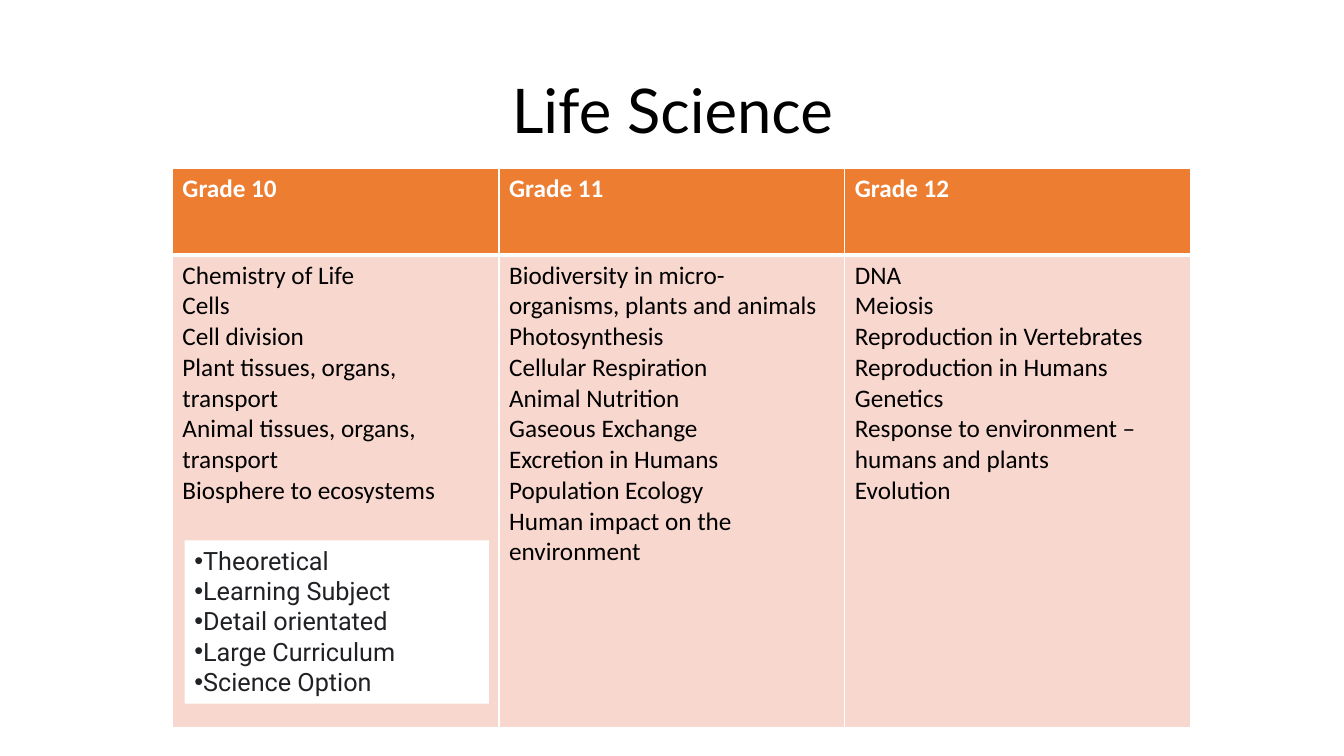
"""Builds the Life Science curriculum slide."""
import dataclasses

import lxml.etree
import pptx
import pptx.dml.color
import pptx.enum.shapes
import pptx.enum.text
import pptx.oxml.ns
import pptx.util

Inches = pptx.util.Inches


@dataclasses.dataclass(frozen=True)
class Theme:
    """Colours, fonts and type sizes of the slide."""
    black: str = "000000"
    white: str = "FFFFFF"
    header: str = "ED7D31"
    body: str = "F8D7CE"
    note: str = "202124"
    title_font: str = "Lato"
    table_font: str = "Calibri"
    note_font: str = "Roboto"
    title_size: int = 44
    text_size: int = 18
    rule: int = 1
    header_rule: int = 3


def add_child(parent, tag, **attributes):
    """Append a DrawingML element and return it."""
    return lxml.etree.SubElement(parent, pptx.oxml.ns.qn(tag), **attributes)


class SlideBuilder:
    """Holds the theme and the current slide."""

    def __init__(self, slide, theme):
        """Keep the slide and theme for the element methods."""
        self.slide = slide
        self.theme = theme

    def fill(self, target, colour):
        """Give a shape or cell a solid fill."""
        target.fill.solid()
        target.fill.fore_color.rgb = pptx.dml.color.RGBColor.from_string(colour)

    def add_lines(self, frame, lines, font, size, colour, bold=False,
                  align=pptx.enum.text.PP_ALIGN.LEFT):
        """Add each line as a paragraph with one run."""
        for index, line in enumerate(lines):
            paragraph = frame.add_paragraph() if index else frame.paragraphs[0]
            paragraph.alignment = align
            run = paragraph.add_run()
            run.text = line
            run.font.name = font
            run.font.size = pptx.util.Pt(size)
            run.font.bold = bold
            run.font.color.rgb = pptx.dml.color.RGBColor.from_string(colour)

    def title(self, text, left, top, width, height):
        """Place and fill the title placeholder."""
        heading = self.slide.shapes.title
        heading.left, heading.top = Inches(left), Inches(top)
        heading.width, heading.height = Inches(width), Inches(height)
        frame = heading.text_frame
        frame.vertical_anchor = pptx.enum.text.MSO_ANCHOR.MIDDLE
        self.add_lines(frame, [text], self.theme.title_font,
                       self.theme.title_size, self.theme.black,
                       align=pptx.enum.text.PP_ALIGN.CENTER)
        frame.paragraphs[0].line_spacing = 0.9

    def borders(self, cell, top, bottom):
        """Draw white rules on the four sides of a cell."""
        properties = cell._tc.get_or_add_tcPr()
        widths = {"L": self.theme.rule, "R": self.theme.rule, "T": top, "B": bottom}
        for position, (side, width) in enumerate(widths.items()):
            line = add_child(properties, f"a:ln{side}", w=str(pptx.util.Pt(width)))
            paint = add_child(line, "a:solidFill")
            add_child(paint, "a:srgbClr", val=self.theme.white)
            properties.insert(position, line)

    def table(self, columns, left, top, widths, heights):
        """Add a table with a header and a list of topics per column."""
        theme = self.theme
        grid = self.slide.shapes.add_table(
            len(heights), len(widths), Inches(left), Inches(top),
            Inches(sum(widths)), Inches(sum(heights))).table
        for row, height in zip(grid.rows, heights):
            row.height = Inches(height)
        for index, (grade, topics) in enumerate(columns.items()):
            grid.columns[index].width = Inches(widths[index])
            header, body = grid.cell(0, index), grid.cell(1, index)
            self.fill(header, theme.header)
            self.add_lines(header.text_frame, [grade], theme.table_font,
                           theme.text_size, theme.white, bold=True)
            self.borders(header, theme.rule, theme.header_rule)
            self.fill(body, theme.body)
            self.add_lines(body.text_frame, topics, theme.table_font,
                           theme.text_size, theme.black)
            self.borders(body, theme.header_rule, theme.rule)

    def bullet_panel(self, items, left, top, width, height):
        """Add a plain rectangle holding a bulleted list."""
        panel = self.slide.shapes.add_shape(
            pptx.enum.shapes.MSO_SHAPE.RECTANGLE,
            Inches(left), Inches(top), Inches(width), Inches(height))
        panel.shadow.inherit = False
        self.fill(panel, self.theme.white)
        panel.line.fill.background()
        frame = panel.text_frame
        frame.word_wrap = True
        frame.auto_size = pptx.enum.text.MSO_AUTO_SIZE.SHAPE_TO_FIT_TEXT
        frame.vertical_anchor = pptx.enum.text.MSO_ANCHOR.TOP
        self.add_lines(frame, items, self.theme.note_font,
                       self.theme.text_size, self.theme.note)
        for paragraph in frame.paragraphs:
            properties = paragraph._p.get_or_add_pPr()
            add_child(properties, "a:buFont", typeface="Arial")
            add_child(properties, "a:buChar", char="•")


GRADES = {
    "Grade 10": [
        "Chemistry of Life", "Cells", "Cell division",
        "Plant tissues, organs, transport",
        "Animal tissues, organs, transport", "Biosphere to ecosystems",
    ],
    "Grade 11": [
        "Biodiversity in micro-organisms, plants and animals",
        "Photosynthesis", "Cellular Respiration", "Animal Nutrition",
        "Gaseous Exchange", "Excretion in Humans", "Population Ecology",
        "Human impact on the environment",
    ],
    "Grade 12": [
        "DNA", "Meiosis", "Reproduction in Vertebrates",
        "Reproduction in Humans", "Genetics",
        "Response to environment – humans and plants", "Evolution",
    ],
}
SUBJECT_TRAITS = ["Theoretical", "Learning Subject", "Detail orientated",
                  "Large Curriculum", "Science Option"]


def main():
    """Build and save the presentation."""
    deck = pptx.Presentation()
    deck.slide_width, deck.slide_height = Inches(13.33), Inches(7.5)
    title_only = deck.slide_layouts[5]
    builder = SlideBuilder(deck.slides.add_slide(title_only), Theme())
    builder.title("Life Science", 0.92, 0.4, 11.5, 1.45)
    builder.table(GRADES, 1.71, 1.67, [3.24, 3.43, 3.43], [0.86, 4.69])
    builder.bullet_panel(SUBJECT_TRAITS, 1.83, 5.36, 3.02, 1.62)
    deck.save("out.pptx")


if __name__ == "__main__":
    main()
